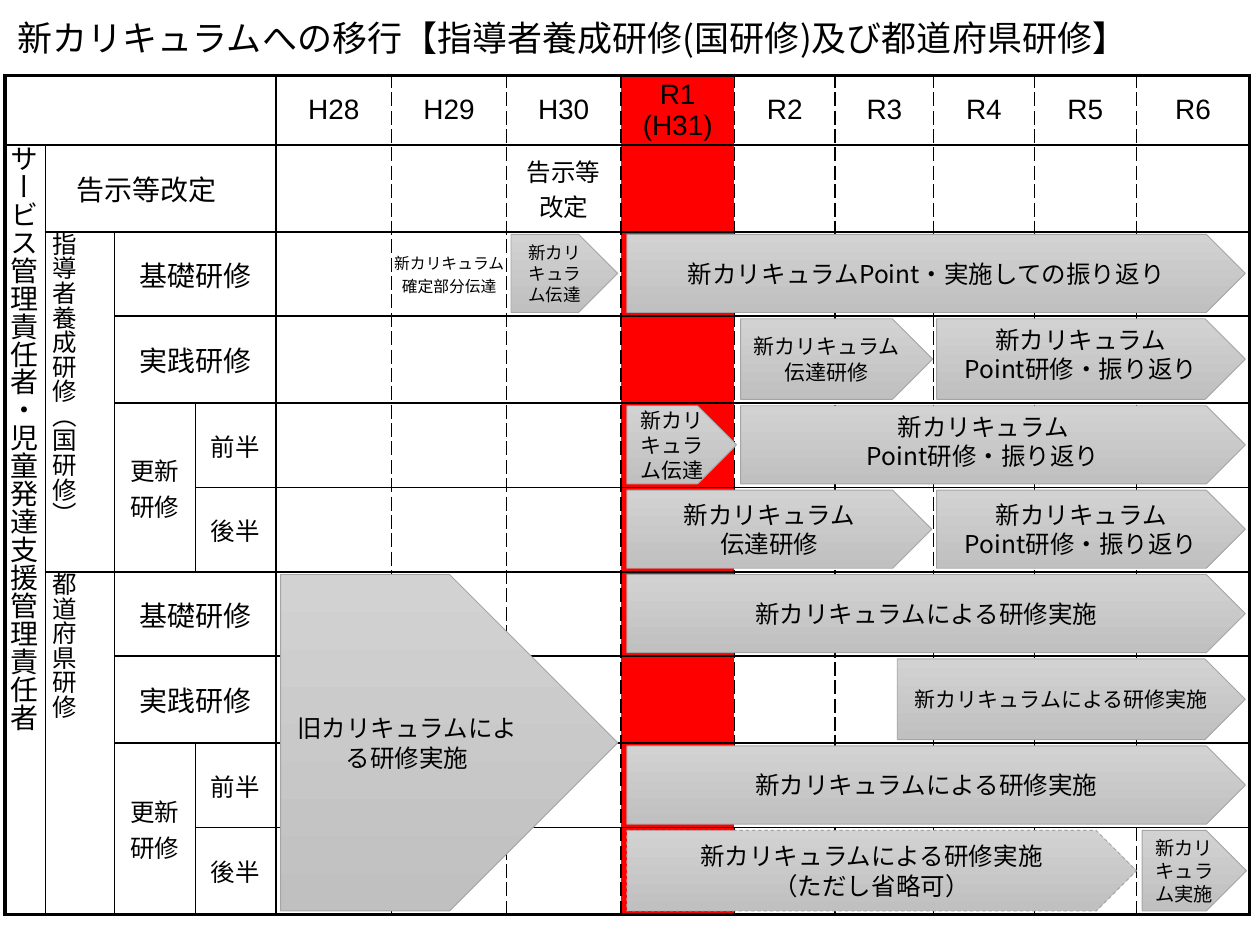
"""Builds the curriculum transition schedule slide."""
from itertools import accumulate

from lxml import etree
from pptx import Presentation
from pptx.dml.color import RGBColor
from pptx.enum.dml import MSO_LINE
from pptx.enum.shapes import MSO_SHAPE
from pptx.enum.text import MSO_ANCHOR, PP_ALIGN
from pptx.oxml.ns import qn
from pptx.util import Inches, Pt

PENTAGON, DASH = MSO_SHAPE.PENTAGON, MSO_LINE.DASH
TOP, MIDDLE = MSO_ANCHOR.TOP, MSO_ANCHOR.MIDDLE
LEFT, CENTER = PP_ALIGN.LEFT, PP_ALIGN.CENTER

THEME = {
    "latin": "Arial", "cjk": "Noto Sans CJK JP",
    "ink": "000000", "now": "FF0000", "bar_top": "D2D2D2", "bar_bottom": "C0C0C0", "bar_line": "A5A5A5",
    "title": 20, "head": 16, "body": 14, "small": 12, "narrow": 11, "tiny": 10, "note": 9,
    "thin": 1, "thick": 2.25, "hair": 0.5,
}

TITLE = "新カリキュラムへの移行【指導者養成研修(国研修)及び都道府県研修】"
YEARS = ["H28", "H29", "H30", "R1\n(H31)", "R2", "R3", "R4", "R5", "R6"]
COLS = [0.32, 0.55, 0.64, 0.64, 0.92, 0.91, 0.91, 0.9, 0.8, 0.78, 0.8, 0.81, 0.9]
ROWS = [0.55, 0.69, 0.67, 0.69, 0.67, 0.67, 0.67, 0.69, 0.67, 0.69]
TABLE_LEFT, TABLE_TOP = 0.04, 0.6
FIRST_YEAR, NOW_COL = 4, 7
DASHES = {5: "dash", 6: "dash", 7: "dash", 8: "dash", 9: "sysDash", 10: "sysDash", 11: "dash", 12: "sysDash"}

# row, column, rows spanned, columns spanned, text, size
LABELS = [
    (0, 0, 1, 4, "", "head"),
    (1, 1, 1, 3, "告示等改定　", "head"),
    (1, 6, 1, 1, "告示等\n改定", "body"),
    (2, 5, 1, 1, "新カリキュラム確定部分伝達", "note"),
]
VERTICAL = [
    (1, 0, 9, "サービス管理責任者・児童発達支援管理責任者", "head"),
    (2, 1, 4, "指導者養成研修（国研修）", "body"),
    (6, 1, 4, "都道府県研修", "body"),
]
COURSES = [
    (0, 2, 1, 2, "基礎研修", "head"),
    (1, 2, 1, 2, "実践研修", "head"),
    (2, 2, 2, 1, "更新\n研修", "body"),
    (2, 3, 1, 1, "前半", "body"),
    (3, 3, 1, 1, "後半", "body"),
]
GROUP_ROWS = [2, 6]

REVIEW = "新カリキュラム\nPoint研修・振り返り"
HANDOVER = "新カリキュラム\n伝達研修"
TRAINING = "新カリキュラムによる研修実施"
# first row, rows, start year, end year, text, format
BARS = [
    (2, 1, 3.05, 8.96, "新カリキュラムPoint・実施しての振り返り", {}),
    (6, 4, 0.04, 2.97, "旧カリキュラムによる研修実施", {}),
    (2, 1, 2.04, 2.97, "新カリキュラム伝達", {"size": "tiny"}),
    (3, 1, 4.06, 5.99, HANDOVER, {"size": "small"}),
    (3, 1, 6.03, 8.96, REVIEW, {"anchor": TOP}),
    (6, 1, 3.05, 8.96, TRAINING, {}),
    (4, 1, 4.06, 8.96, REVIEW, {"anchor": TOP}),
    (5, 1, 3.05, 5.98, HANDOVER, {}),
    (5, 1, 6.03, 8.96, REVIEW, {}),
    (4, 1, 3.05, 4.02, "新カリキュラム伝達", {"size": "small"}),
    (7, 1, 5.63, 8.96, TRAINING, {"size": "small"}),
    (8, 1, 3.05, 8.96, TRAINING, {}),
    (9, 1, 8.05, 8.97, "新カリキュラム実施", {"size": "narrow"}),
    (9, 1, 3.05, 8.0, TRAINING + "\n（ただし省略可）", {"dash": DASH}),
]

XS = list(accumulate(COLS, initial=TABLE_LEFT))
YS = list(accumulate(ROWS, initial=TABLE_TOP))


def color(name):
    return RGBColor.from_string(THEME[name])


def write(tf, text, size="body", font="cjk", align=CENTER, spacing=None):
    for i, line in enumerate(text.split("\n")):
        p = tf.paragraphs[0] if i == 0 else tf.add_paragraph()
        p.alignment = align
        if spacing:
            p.line_spacing = spacing
        r = p.add_run()
        r.text = line
        r.font.size = Pt(THEME[size])
        r.font.color.rgb = color("ink")
        r.font.name = THEME[font]
        ea = etree.SubElement(r._r.get_or_add_rPr(), qn("a:ea"))
        ea.set("typeface", THEME["cjk"])


def border(cell, index, side, width, dash):
    ln = etree.Element(qn(f"a:ln{side}"), w=str(Pt(THEME[width])))
    fill = etree.SubElement(ln, qn("a:solidFill"))
    etree.SubElement(fill, qn("a:srgbClr"), val=THEME["ink"])
    etree.SubElement(ln, qn("a:prstDash"), val=dash)
    cell._tc.get_or_add_tcPr().insert(index, ln)


def style_cell(cell, row, col):
    cell.margin_left = cell.margin_right = cell.margin_top = cell.margin_bottom = 0
    cell.vertical_anchor = MIDDLE
    if col == NOW_COL:
        cell.fill.solid()
        cell.fill.fore_color.rgb = color("now")
    else:
        cell.fill.background()
    right = col + (cell.span_width if cell.is_merge_origin else 1)
    bottom = row + (cell.span_height if cell.is_merge_origin else 1)
    edges = [("L", col, len(COLS), DASHES), ("R", right, len(COLS), DASHES),
             ("T", row, len(ROWS), {}), ("B", bottom, len(ROWS), {})]
    for i, (side, at, last, dashes) in enumerate(edges):
        border(cell, i, side, "thick" if at in (0, last) else "thin", dashes.get(at, "solid"))


def add_schedule(s):
    frame = s.shapes.add_table(len(ROWS), len(COLS), Inches(TABLE_LEFT), Inches(TABLE_TOP),
                               Inches(sum(COLS)), Inches(sum(ROWS)))
    table = frame.table
    table.first_row = table.horz_banding = False
    for col, width in zip(table.columns, COLS):
        col.width = Inches(width)
    for row, height in zip(table.rows, ROWS):
        row.height = Inches(height)

    heads = [(0, FIRST_YEAR + i, 1, 1, year, "head") for i, year in enumerate(YEARS)]
    groups = [(r, c, down, 1, "", size) for r, c, down, _, size in VERTICAL]
    courses = [(first + r, *rest) for first in GROUP_ROWS for r, *rest in COURSES]
    for r, c, down, across, text, size in heads + LABELS + groups + courses:
        cell = table.cell(r, c)
        if down * across > 1:
            cell.merge(table.cell(r + down - 1, c + across - 1))
        if text:
            write(cell.text_frame, text, size=size, font="latin")
    for r in range(len(ROWS)):
        for c in range(len(COLS)):
            if not table.cell(r, c).is_spanned:
                style_cell(table.cell(r, c), r, c)


def add_vertical_label(s, row, col, rows, text, size):
    sp = s.shapes.add_textbox(Inches(XS[col] - 0.01), Inches(YS[row]), Inches(0.32),
                              Inches(YS[row + rows] - YS[row]))
    tf = sp.text_frame
    tf.margin_left = tf.margin_right = tf.margin_top = tf.margin_bottom = 0
    tf.word_wrap = True
    tf.vertical_anchor = MIDDLE
    tf._txBody.bodyPr.set("vert", "eaVert")
    write(tf, text, size=size)


def year_x(year):
    col = FIRST_YEAR + int(year)
    return XS[col] + (year - int(year)) * COLS[col]


def add_bar(s, row, rows, start, end, text, size="body", anchor=MIDDLE, dash=None):
    x, y = year_x(start), YS[row] + 0.02
    sp = s.shapes.add_shape(PENTAGON, Inches(x), Inches(y), Inches(year_x(end) - x),
                            Inches(YS[row + rows] - 0.03 - y))
    sp.shadow.inherit = False
    sp.fill.gradient()
    sp.fill.gradient_angle = 270
    for stop, name in zip(sp.fill.gradient_stops, ("bar_top", "bar_bottom")):
        stop.color.rgb = color(name)
    sp.line.color.rgb = color("bar_line")
    sp.line.width = Pt(THEME["hair"])
    if dash:
        sp.line.dash_style = dash
    sp.text_frame.word_wrap = True
    sp.text_frame.vertical_anchor = anchor
    write(sp.text_frame, text, size=size)


def main():
    prs = Presentation()
    prs.slide_width, prs.slide_height = Inches(10), Inches(7.5)
    s = prs.slides.add_slide(prs.slide_layouts[5])
    title = s.shapes.title
    title.left, title.top, title.width, title.height = map(Inches, (0.04, 0.05, 9.84, 0.54))
    title.text_frame.vertical_anchor = MIDDLE
    write(title.text_frame, TITLE, size="title", align=LEFT, spacing=0.9)
    add_schedule(s)
    for label in VERTICAL:
        add_vertical_label(s, *label)
    for *place, fmt in BARS:
        add_bar(s, *place, **fmt)
    prs.save("out.pptx")


if __name__ == "__main__":
    main()
